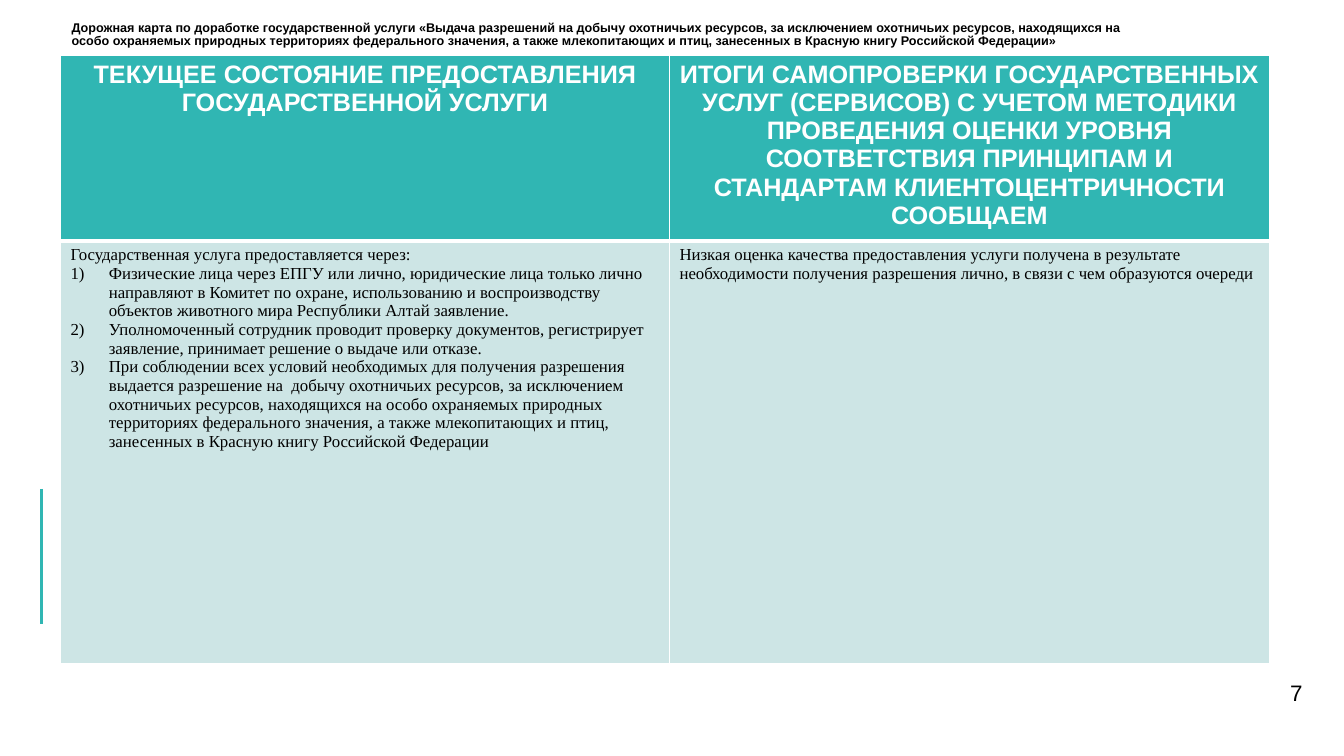
from lxml import etree
from pptx import Presentation
from pptx.dml import color
from pptx.enum import text
from pptx.oxml import ns
from pptx.util import Inches, Pt

TEAL, PALE, WHITE, BLACK = "30B6B3", "CDE5E5", "FFFFFF", "000000"
SANS, SERIF = "Arial", "Times New Roman"
LEFT, CENTER, RIGHT = text.PP_ALIGN.LEFT, text.PP_ALIGN.CENTER, text.PP_ALIGN.RIGHT

TITLE = (
    "Дорожная карта по доработке государственной услуги «Выдача разрешений на добычу "
    "охотничьих ресурсов, за исключением охотничьих ресурсов, находящихся на особо "
    "охраняемых природных территориях федерального значения, а также млекопитающих и птиц, "
    "занесенных в Красную книгу Российской Федерации»"
)
HEADINGS = [
    "ТЕКУЩЕЕ СОСТОЯНИЕ ПРЕДОСТАВЛЕНИЯ ГОСУДАРСТВЕННОЙ УСЛУГИ",
    "ИТОГИ САМОПРОВЕРКИ ГОСУДАРСТВЕННЫХ УСЛУГ (СЕРВИСОВ) С УЧЕТОМ МЕТОДИКИ ПРОВЕДЕНИЯ "
    "ОЦЕНКИ УРОВНЯ СООТВЕТСТВИЯ ПРИНЦИПАМ И СТАНДАРТАМ КЛИЕНТОЦЕНТРИЧНОСТИ СООБЩАЕМ",
]
INTRO = "Государственная услуга предоставляется через:"
STEPS = [
    "Физические лица через ЕПГУ или лично, юридические лица только лично направляют в Комитет "
    "по охране, использованию и воспроизводству объектов животного мира Республики Алтай заявление.",
    "Уполномоченный сотрудник проводит проверку документов, регистрирует заявление, "
    "принимает решение о выдаче или отказе.",
    "При соблюдении всех условий необходимых для получения разрешения выдается разрешение на  "
    "добычу охотничьих ресурсов, за исключением охотничьих ресурсов, находящихся на особо "
    "охраняемых природных территориях федерального значения, а также млекопитающих и птиц, "
    "занесенных в Красную книгу Российской Федерации",
]
RESULT = (
    "Низкая оценка качества предоставления услуги получена в результате необходимости "
    "получения разрешения лично, в связи с чем образуются очереди"
)


def rgb(value):
    return color.RGBColor.from_string(value)


def write(paragraph, words, size, font, colour, bold=False, align=LEFT):
    paragraph.alignment = align
    run = paragraph.add_run()
    run.text = words
    run.font.size = Pt(size)
    run.font.name = font
    run.font.bold = bold
    run.font.color.rgb = rgb(colour)


def number(paragraph):
    """Give a paragraph an automatic 1) number and a hanging indent."""
    properties = paragraph._p.get_or_add_pPr()
    properties.set("marL", str(Inches(0.38)))
    properties.set("indent", str(-Inches(0.38)))
    etree.SubElement(properties, ns.qn("a:buFont"), typeface="+mj-lt")
    etree.SubElement(properties, ns.qn("a:buAutoNum"), type="arabicParenR")


def prepare_frame(frame, anchor):
    frame.word_wrap = True
    frame.auto_size = text.MSO_AUTO_SIZE.NONE
    frame.vertical_anchor = anchor
    frame.margin_left = frame.margin_right = frame.margin_top = frame.margin_bottom = 0


def style_cell(cell, fill, top, bottom):
    """Draw white borders, then fill the cell."""
    properties = cell._tc.get_or_add_tcPr()
    for side, width in (("L", 1), ("R", 1), ("T", top), ("B", bottom)):
        border = etree.SubElement(properties, ns.qn(f"a:ln{side}"), w=str(Pt(width)))
        solid = etree.SubElement(border, ns.qn("a:solidFill"))
        etree.SubElement(solid, ns.qn("a:srgbClr"), val=WHITE)
    cell.fill.solid()
    cell.fill.fore_color.rgb = rgb(fill)


def add_title(slide):
    title = slide.shapes.title
    title.left, title.top = Inches(0.71), Inches(0.21)
    title.width, title.height = Inches(10.74), Inches(0.4)
    prepare_frame(title.text_frame, text.MSO_ANCHOR.TOP)
    paragraph = title.text_frame.paragraphs[0]
    paragraph.line_spacing = 0.9
    write(paragraph, TITLE, 9, SANS, BLACK, bold=True)


def add_page_number(slide):
    box = slide.shapes.add_textbox(Inches(11.86), Inches(6.66), Inches(1.06), Inches(0.43))
    prepare_frame(box.text_frame, text.MSO_ANCHOR.MIDDLE)
    write(box.text_frame.paragraphs[0], "7", 16, SANS, BLACK, align=RIGHT)


def add_accent_line(slide):
    line = slide.shapes.add_connector(1, Inches(0.41), Inches(4.85), Inches(0.41), Inches(6.19))
    line.line.color.rgb = rgb(TEAL)
    line.line.width = Pt(2.25)
    etree.SubElement(line._element.spPr, ns.qn("a:effectLst"))


def add_review_table(slide):
    widths, heights = (6.04, 5.95), (1.84, 4.19)
    frame = slide.shapes.add_table(
        2, 2, Inches(0.6), Inches(0.55), Inches(sum(widths)), Inches(sum(heights)))
    table = frame.table
    table.horz_banding = False
    for column, width in zip(table.columns, widths):
        column.width = Inches(width)
    for row, height in zip(table.rows, heights):
        row.height = Inches(height)

    # Heading row
    for index, heading in enumerate(HEADINGS):
        cell = table.cell(0, index)
        style_cell(cell, TEAL, top=1, bottom=3)
        write(cell.text_frame.paragraphs[0], heading, 18, SANS, WHITE, bold=True, align=CENTER)

    # Body row
    for index, opening in enumerate((INTRO, RESULT)):
        cell = table.cell(1, index)
        style_cell(cell, PALE, top=3, bottom=1)
        write(cell.text_frame.paragraphs[0], opening, 12, SERIF, BLACK)
    for step in STEPS:
        paragraph = table.cell(1, 0).text_frame.add_paragraph()
        number(paragraph)
        write(paragraph, step, 12, SERIF, BLACK)


def main():
    presentation = Presentation()
    presentation.slide_width, presentation.slide_height = Inches(13.33), Inches(7.5)
    slide = presentation.slides.add_slide(presentation.slide_layouts[5])
    add_title(slide)
    add_page_number(slide)
    add_accent_line(slide)
    add_review_table(slide)
    presentation.save("out.pptx")


if __name__ == "__main__":
    main()
